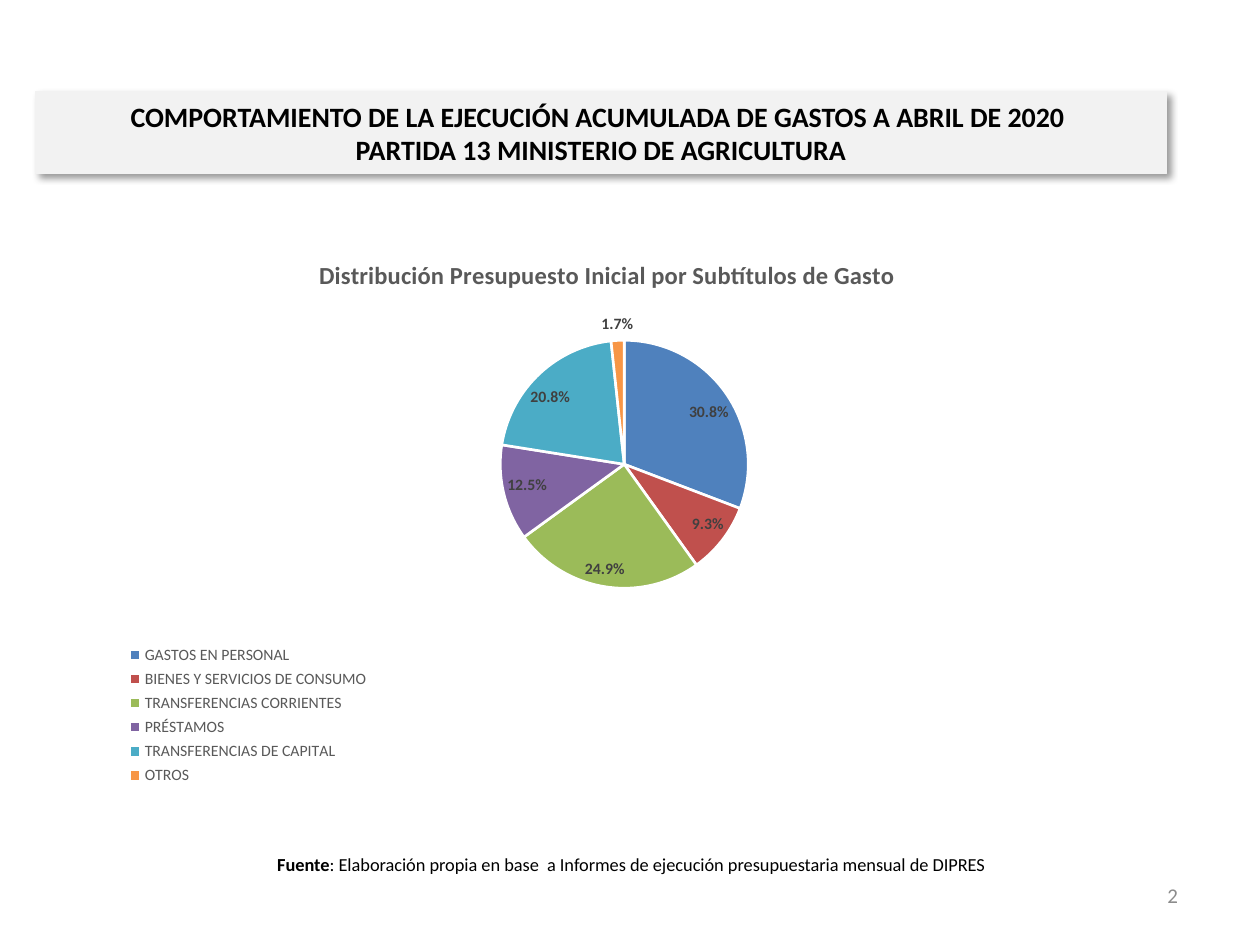
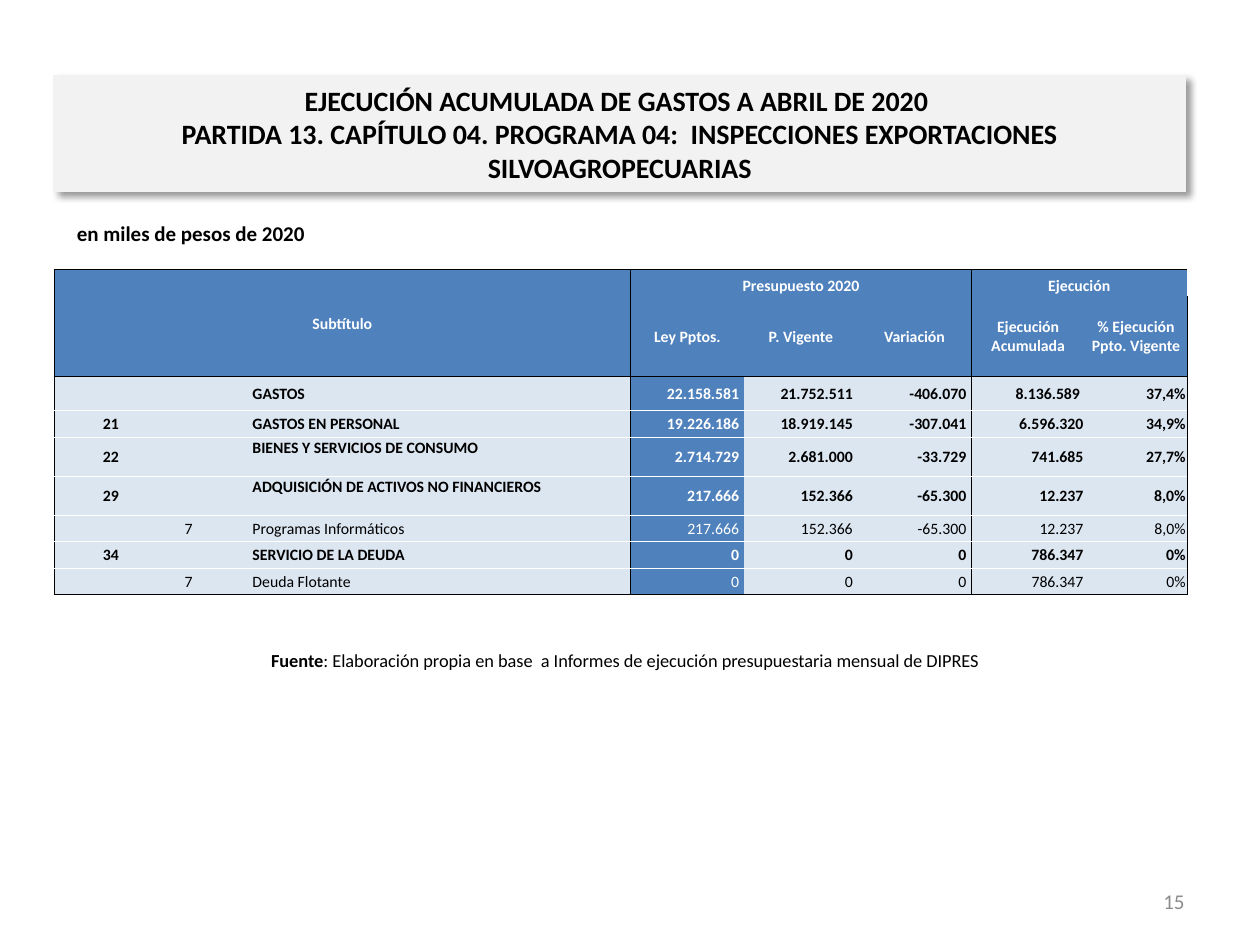
from lxml import etree
from pptx import Presentation
from pptx.chart.data import CategoryChartData
from pptx.dml.color import RGBColor
from pptx.enum.chart import XL_CHART_TYPE, XL_LABEL_POSITION, XL_LEGEND_POSITION
from pptx.enum.shapes import MSO_SHAPE
from pptx.enum.text import MSO_ANCHOR, PP_ALIGN
from pptx.oxml.ns import qn
from pptx.util import Cm, Pt

PIE = XL_CHART_TYPE.PIE
BEST_FIT = XL_LABEL_POSITION.BEST_FIT
LEGEND_BOTTOM = XL_LEGEND_POSITION.BOTTOM
RECTANGLE = MSO_SHAPE.RECTANGLE
TOP, MIDDLE, BOTTOM = MSO_ANCHOR.TOP, MSO_ANCHOR.MIDDLE, MSO_ANCHOR.BOTTOM
LEFT, CENTER, RIGHT = PP_ALIGN.LEFT, PP_ALIGN.CENTER, PP_ALIGN.RIGHT

FONT = "Calibri"
COLORS = {
    "black": "000000", "white": "FFFFFF", "band": "F2F2F2", "number": "8C8C8C",
    "header": "4F81BD", "body": "DCE6F1", "chart_text": "595959", "label": "404040",
}
SLICES = [
    ("GASTOS EN PERSONAL", 30.8, "4F81BD"),
    ("BIENES Y SERVICIOS DE CONSUMO", 9.3, "C0504D"),
    ("TRANSFERENCIAS CORRIENTES", 24.9, "9BBB59"),
    ("PRÉSTAMOS", 12.5, "8064A2"),
    ("TRANSFERENCIAS DE CAPITAL", 20.8, "4BACC6"),
    ("OTROS", 1.7, "F79646"),
]
COLUMN_WIDTHS = [2.29, 0.84, 0.84, 7.65, 2.29, 2.29, 2.29, 2.29, 2.06]
ROW_HEIGHTS = [0.53, 1.63, 0.69, 0.53, 0.79, 0.79, 0.53, 0.53, 0.53]
GROUP_STARTS = (0, 4, 7)
NAME_COLUMN, LAW_COLUMN = 3, 4
HEADER_ROWS = 2
TABLE_ROWS = [
    ["Subtítulo", "", "", "", "Presupuesto 2020", "", "", "Ejecución", ""],
    ["", "", "", "", "Ley Pptos.", "P. Vigente", "Variación",
     "Ejecución Acumulada", "% Ejecución Ppto. Vigente"],
    ["", "", "", "GASTOS", "22.158.581", "21.752.511", "-406.070", "8.136.589", "37,4%"],
    ["21", "", "", "GASTOS EN PERSONAL", "19.226.186", "18.919.145", "-307.041",
     "6.596.320", "34,9%"],
    ["22", "", "", "BIENES Y SERVICIOS DE CONSUMO", "2.714.729", "2.681.000", "-33.729",
     "741.685", "27,7%"],
    ["29", "", "", "ADQUISICIÓN DE ACTIVOS NO FINANCIEROS", "217.666", "152.366", "-65.300",
     "12.237", "8,0%"],
    ["", "7", "", "Programas Informáticos", "217.666", "152.366", "-65.300", "12.237", "8,0%"],
    ["34", "", "", "SERVICIO DE LA DEUDA", "0", "0", "0", "786.347", "0%"],
    ["", "7", "", "Deuda Flotante", "0", "0", "0", "786.347", "0%"],
]


def rgb(name):
    """Return the named colour."""
    return RGBColor.from_string(COLORS[name])


def style_font(font, size, color, bold=False):
    """Set typeface, size, colour and weight of a font."""
    font.name = FONT
    font.size = Pt(size)
    font.bold = bold
    font.color.rgb = rgb(color)


def add_text(slide, box, parts, size, color="black", align=LEFT, anchor=MIDDLE):
    """Add a one-paragraph text box made of (text, bold) parts."""
    shape = slide.shapes.add_textbox(*map(Cm, box))
    frame = shape.text_frame
    frame.word_wrap = True
    frame.vertical_anchor = anchor
    paragraph = frame.paragraphs[0]
    paragraph.alignment = align
    for text, bold in parts:
        run = paragraph.add_run()
        run.text = text
        style_font(run.font, size, color, bold)


def add_title_band(slide, box, text):
    """Add the grey shadowed band that holds the slide title."""
    shape = slide.shapes.add_shape(RECTANGLE, *map(Cm, box))
    shape.fill.solid()
    shape.fill.fore_color.rgb = rgb("band")
    shape.line.color.rgb = rgb("band")
    shape.line.width = Pt(0.75)
    shape.shadow.inherit = False
    effects = shape.element.spPr.find(qn("a:effectLst"))
    shadow = etree.SubElement(effects, qn("a:outerShdw"), blurRad=str(Pt(4)),
                              dist=str(Pt(3)), dir="2700000", algn="tl", rotWithShape="0")
    shade = etree.SubElement(shadow, qn("a:srgbClr"), val=COLORS["black"])
    etree.SubElement(shade, qn("a:alpha"), val="40000")
    frame = shape.text_frame
    frame.word_wrap = True
    frame.vertical_anchor = MIDDLE
    frame.text = text
    paragraph = frame.paragraphs[0]
    paragraph.alignment = CENTER
    for run in paragraph.runs:
        style_font(run.font, 16, "black", True)


def add_source(slide, box):
    """Add the centred source line."""
    parts = [("Fuente", True),
             (": Elaboración propia en base  a Informes de ejecución presupuestaria "
              "mensual de DIPRES", False)]
    add_text(slide, box, parts, 10.5, align=CENTER)


def add_slide_number(slide, left, top, number):
    """Add the grey slide number."""
    add_text(slide, (left, top, 5.92, 1.02), [(number, False)], 12, "number", RIGHT)


def set_layout(element, **fractions):
    """Give a chart element a manual layout in fractions of the chart."""
    layout = element.find(qn("c:layout"))
    if layout is None:
        layout = etree.Element(qn("c:layout"))
        before = element.find(qn("c:overlay"))
        if before is None:
            element.insert(0, layout)
        else:
            before.addprevious(layout)
    manual = etree.SubElement(layout, qn("c:manualLayout"))
    if "w" in fractions and element.tag == qn("c:plotArea"):
        etree.SubElement(manual, qn("c:layoutTarget"), val="inner")
    for axis in "xy":
        etree.SubElement(manual, qn(f"c:{axis}Mode"), val="edge")
    for key, value in fractions.items():
        etree.SubElement(manual, qn(f"c:{key}"), val=str(value))


def add_budget_pie(slide, box):
    """Add the pie of the initial budget by kind of expense."""
    data = CategoryChartData()
    data.categories = [name for name, _, _ in SLICES]
    data.add_series("Presupuesto Inicial", [value for _, value, _ in SLICES])
    chart = slide.shapes.add_chart(PIE, *map(Cm, box), data).chart
    style_font(chart.font, 10, "black")

    chart.has_title = True
    title = chart.chart_title
    title.include_in_layout = False
    title.text_frame.text = "Distribución Presupuesto Inicial por Subtítulos de Gasto"
    style_font(title.text_frame.paragraphs[0].runs[0].font, 14, "chart_text", True)
    set_layout(title.format.fill and chart.element.find(".//" + qn("c:title")), x=0.24, y=0.04)

    chart.has_legend = True
    legend = chart.legend
    legend.position = LEGEND_BOTTOM
    legend.include_in_layout = False
    style_font(legend.font, 9, "chart_text")
    set_layout(chart.element.find(".//" + qn("c:legend")), x=0.05, y=0.71, w=0.26, h=0.26)
    set_layout(chart.element.find(".//" + qn("c:plotArea")), x=0.04, y=0.19, w=0.96, h=0.43)

    plot = chart.plots[0]
    plot.vary_by_categories = True
    for index, (_, _, color) in enumerate(SLICES):
        slice_format = plot.series[0].points[index].format
        slice_format.fill.solid()
        slice_format.fill.fore_color.rgb = RGBColor.from_string(color)
        slice_format.line.color.rgb = rgb("white")
        slice_format.line.width = Pt(1.5)
    plot.has_data_labels = True
    labels = plot.data_labels
    labels.show_percentage = True
    labels.show_value = False
    labels.number_format = "0.0%"
    labels.number_format_is_linked = False
    labels.position = BEST_FIT
    style_font(labels.font, 9, "label", True)


def set_borders(cell, row, column):
    """Rule a cell: black around groups, white between body rows."""
    last_row, last_column = len(ROW_HEIGHTS) - 1, len(COLUMN_WIDTHS) - 1
    inner = None if row < HEADER_ROWS else "white"
    black_top = row in (0, HEADER_ROWS)
    black_bottom = row in (HEADER_ROWS - 1, last_row)
    edges = {
        "a:lnL": "black" if column in GROUP_STARTS else None,
        "a:lnR": "black" if column == last_column or column + 1 in GROUP_STARTS else None,
        "a:lnT": "black" if black_top else inner,
        "a:lnB": "black" if black_bottom else inner,
    }
    properties = cell._tc.get_or_add_tcPr()
    for position, (tag, color) in enumerate(edges.items()):
        line = etree.Element(qn(tag), w=str(Pt(0.5)))
        if color:
            fill = etree.SubElement(line, qn("a:solidFill"))
            etree.SubElement(fill, qn("a:srgbClr"), val=COLORS[color])
        else:
            etree.SubElement(line, qn("a:noFill"))
        properties.insert(position, line)


def fill_cell(cell, row, column, text):
    """Write and format one cell by its place in the table."""
    is_header = row < HEADER_ROWS
    is_dark = is_header or column == LAW_COLUMN
    cell.fill.solid()
    cell.fill.fore_color.rgb = rgb("header" if is_dark else "body")
    cell.margin_left = cell.margin_top = cell.margin_right = Cm(0.03)
    cell.margin_bottom = 0
    if not is_header and (column in (4, 5, 6) or (row, column) == (HEADER_ROWS, 7)):
        cell.margin_right = Cm(0.1)
    cell.vertical_anchor = MIDDLE
    if row == 0 and column > NAME_COLUMN:
        cell.vertical_anchor = BOTTOM
    elif column == NAME_COLUMN and ROW_HEIGHTS[row] == 0.79:
        cell.vertical_anchor = TOP
    paragraph = cell.text_frame.paragraphs[0]
    paragraph.text = text
    if is_header or column < NAME_COLUMN:
        paragraph.alignment = CENTER
    else:
        paragraph.alignment = LEFT if column == NAME_COLUMN else RIGHT
    is_detail = TABLE_ROWS[row][1] != ""
    for run in paragraph.runs:
        style_font(run.font, 9, "white" if is_dark else "black", not is_detail)
    if not text:
        etree.SubElement(paragraph._p, qn("a:endParaRPr"), sz="900")
    set_borders(cell, row, column)


def add_execution_table(slide, left, top):
    """Add the table of budget and execution by subtitle."""
    shape = slide.shapes.add_table(len(ROW_HEIGHTS), len(COLUMN_WIDTHS), Cm(left), Cm(top),
                                   Cm(sum(COLUMN_WIDTHS)), Cm(sum(ROW_HEIGHTS)))
    table = shape.table
    table.first_row = table.horz_banding = False
    for column, width in zip(table.columns, COLUMN_WIDTHS):
        column.width = Cm(width)
    for row, height in zip(table.rows, ROW_HEIGHTS):
        row.height = Cm(height)
    for row, texts in enumerate(TABLE_ROWS):
        for column, text in enumerate(texts):
            fill_cell(table.cell(row, column), row, column, text)
    table.cell(0, 0).merge(table.cell(1, 3))
    table.cell(0, 4).merge(table.cell(0, 6))
    table.cell(0, 7).merge(table.cell(0, 8))


def add_distribution_slide(presentation):
    """Build the slide with the budget pie."""
    slide = presentation.slides.add_slide(presentation.slide_layouts[6])
    add_slide_number(slide, 18.08, 17.53, "2")
    add_title_band(slide, (0.71, 1.85, 22.81, 1.65),
                   "COMPORTAMIENTO DE LA EJECUCIÓN ACUMULADA DE GASTOS A ABRIL DE 2020 \v"
                   "PARTIDA 13 MINISTERIO DE AGRICULTURA")
    add_source(slide, (1.96, 16.92, 21.54, 1.02))
    add_budget_pie(slide, (0.99, 4.65, 22.3, 11.63))


def add_execution_slide(presentation):
    """Build the slide with the execution table."""
    slide = presentation.slides.add_slide(presentation.slide_layouts[6])
    add_source(slide, (1.3, 12.93, 22.61, 0.74))
    add_slide_number(slide, 18.21, 17.65, "15")
    add_text(slide, (1.3, 4.32, 20.83, 0.99), [("en miles de pesos de 2020", True)], 12,
             anchor=TOP)
    add_title_band(slide, (1.09, 1.52, 22.81, 2.34),
                   "EJECUCIÓN ACUMULADA DE GASTOS A ABRIL DE 2020 \v"
                   "PARTIDA 13. CAPÍTULO 04. PROGRAMA 04:  INSPECCIONES EXPORTACIONES "
                   "SILVOAGROPECUARIAS")
    add_execution_table(slide, 1.09, 5.43)


def main():
    """Build and save the presentation."""
    presentation = Presentation()
    presentation.slide_width, presentation.slide_height = Cm(25.4), Cm(19.05)
    add_distribution_slide(presentation)
    add_execution_slide(presentation)
    presentation.save("out.pptx")


if __name__ == "__main__":
    main()
